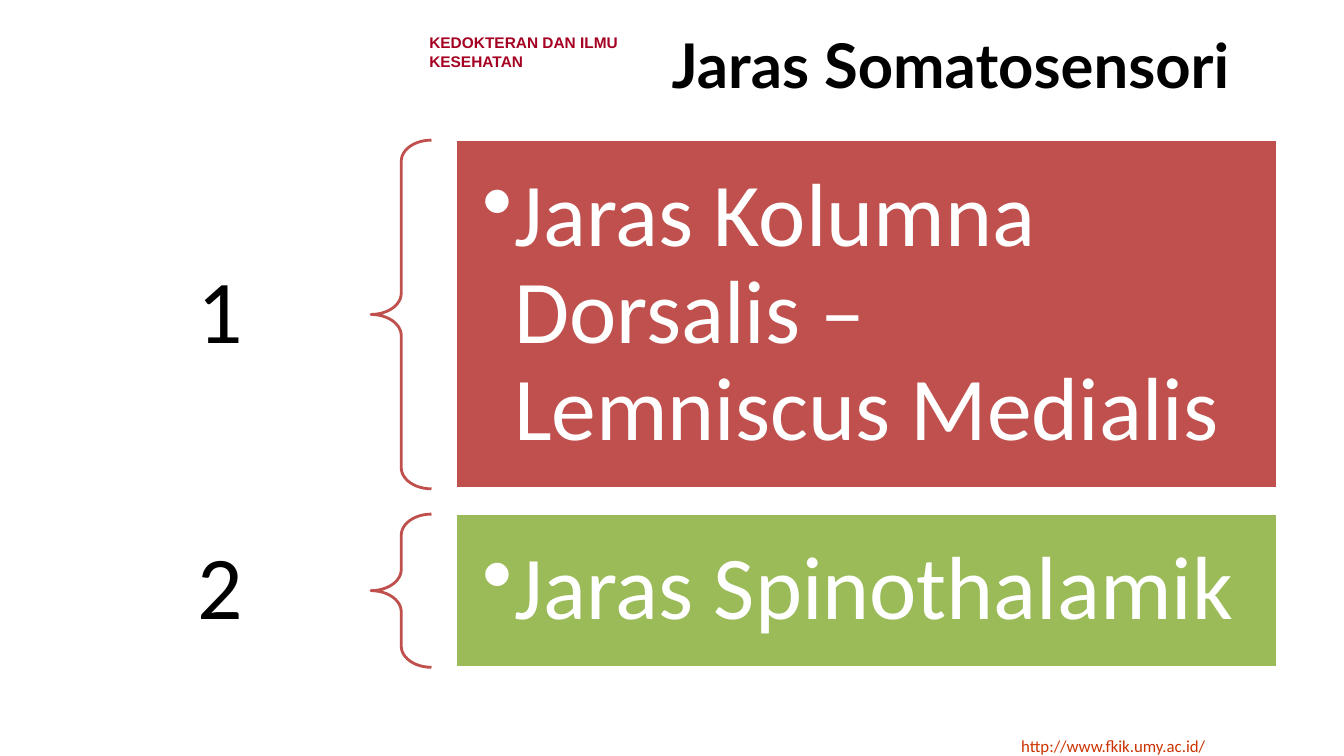
from lxml import etree
from pptx import Presentation
from pptx.dml.color import RGBColor
from pptx.enum.shapes import MSO_SHAPE
from pptx.enum.text import MSO_ANCHOR, PP_ALIGN
from pptx.oxml.ns import qn
from pptx.util import Pt

PX = 9144  # 100 px to the inch
RECTANGLE, LEFT_BRACE = MSO_SHAPE.RECTANGLE, MSO_SHAPE.LEFT_BRACE
TOP, MIDDLE = MSO_ANCHOR.TOP, MSO_ANCHOR.MIDDLE
LEFT, CENTER = PP_ALIGN.LEFT, PP_ALIGN.CENTER
RED, GREEN, WHITE, BLACK = "C0504D", "9BBB59", "FFFFFF", "000000"


def color(code):
    return RGBColor.from_string(code)


def write(box, text, font, ink, anchor=MIDDLE, align=LEFT, inset=(10, 5), spacing=1.0, bullet=False):
    frame = box.text_frame
    across, down = (side * PX for side in inset)
    layout = {"word_wrap": True, "vertical_anchor": anchor, "margin_left": across,
              "margin_right": across, "margin_top": down, "margin_bottom": down}
    for name, value in layout.items():
        setattr(frame, name, value)
    para = frame.paragraphs[0]
    para.alignment = align
    para.line_spacing = spacing
    if bullet:
        settings = para._p.get_or_add_pPr()
        settings.set("marL", str(31 * PX))
        settings.set("indent", str(-31 * PX))
        etree.SubElement(settings, qn("a:buChar")).set("char", "•")
    span = para.add_run()
    span.text = text
    for name, value in font.items():
        setattr(span.font, name, value)
    span.font.color.rgb = color(ink)


deck = Presentation()
deck.slide_width, deck.slide_height = 1333 * PX, 750 * PX
page = deck.slides.add_slide(deck.slide_layouts[6])
shapes = page.shapes

# Header, web address and title
headings = [
    ((416, 32, 240, 39), "KEDOKTERAN DAN ILMU KESEHATAN", "A50021", MIDDLE, LEFT,
     {"name": "Arial", "size": Pt(11), "bold": True}),
    ((1003, 725, 273, 30), "http://www.fkik.umy.ac.id/", "CC3300", TOP, LEFT,
     {"name": "Calibri", "size": Pt(12)}),
    ((635, 12, 631, 103), "Jaras Somatosensori ", BLACK, MIDDLE, CENTER,
     {"name": "Lato", "size": Pt(44), "bold": True}),
]
for place, text, ink, anchor, align, font in headings:
    box = shapes.add_textbox(*(length * PX for length in place))
    write(box, text, font, ink, anchor, align)

# Numbered pathways: number, brace and coloured panel
large = {"name": "Calibri", "size": Pt(64)}
number_height = 139
pathways = [
    ("1", "Jaras Kolumna Dorsalis – Lemniscus Medialis", 139, 346, RED),
    ("2", "Jaras Spinothalamik", 510, 152, GREEN),
]
for number, pathway, top, height, fill in pathways:
    number_top = top + (height - number_height) // 2
    label = shapes.add_textbox(68 * PX, number_top * PX, 300 * PX, number_height * PX)
    write(label, number, large, BLACK, align=CENTER, inset=(50, 18), spacing=0.9)

    brace = shapes.add_shape(LEFT_BRACE, 368 * PX, top * PX, 60 * PX, height * PX)
    brace.adjustments[0] = 0.35
    brace.fill.background()
    panel = shapes.add_shape(RECTANGLE, 452 * PX, top * PX, 815 * PX, height * PX)
    panel.fill.solid()
    panel.fill.fore_color.rgb = color(fill)
    for shape, edge in ((brace, RED), (panel, WHITE)):
        shape.shadow.inherit = False
        shape.line.color.rgb = color(edge)
        shape.line.width = Pt(2)
    write(panel, pathway, large, WHITE, inset=(27, 27), spacing=0.9, bullet=True)

deck.save("out.pptx")
